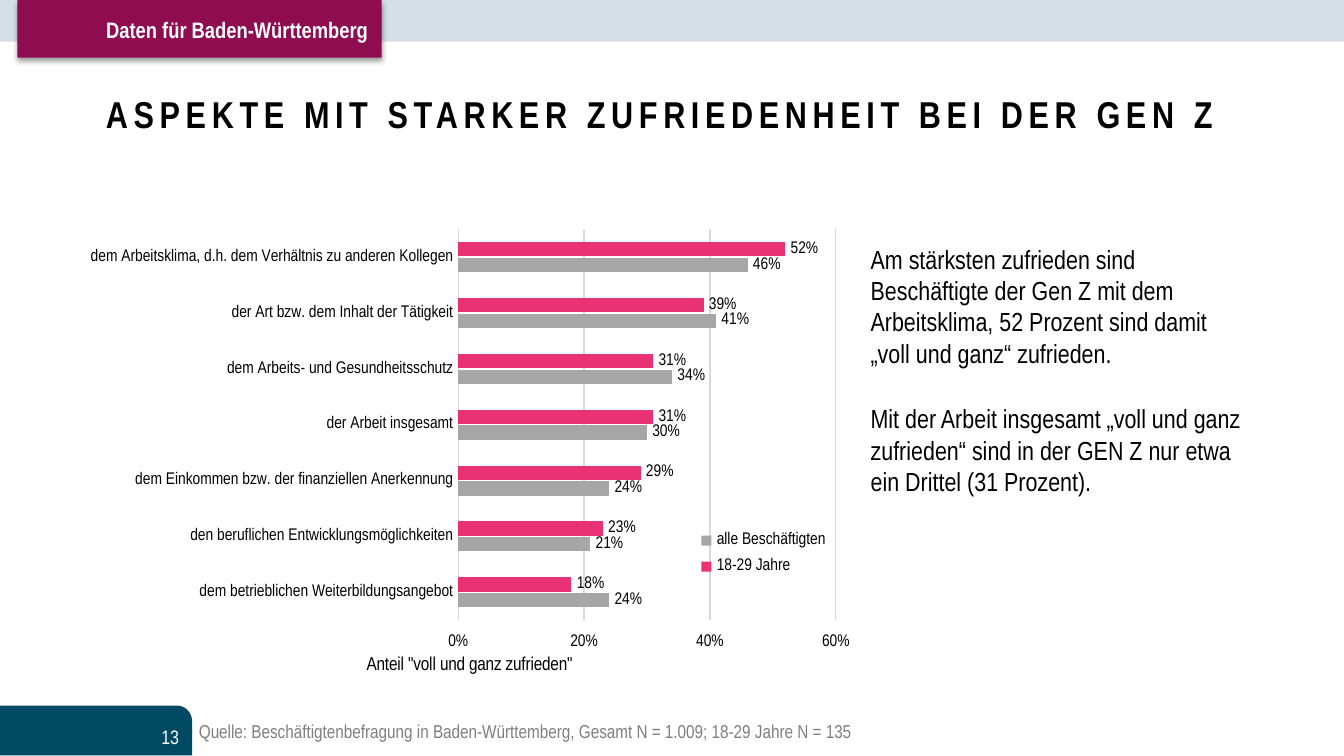
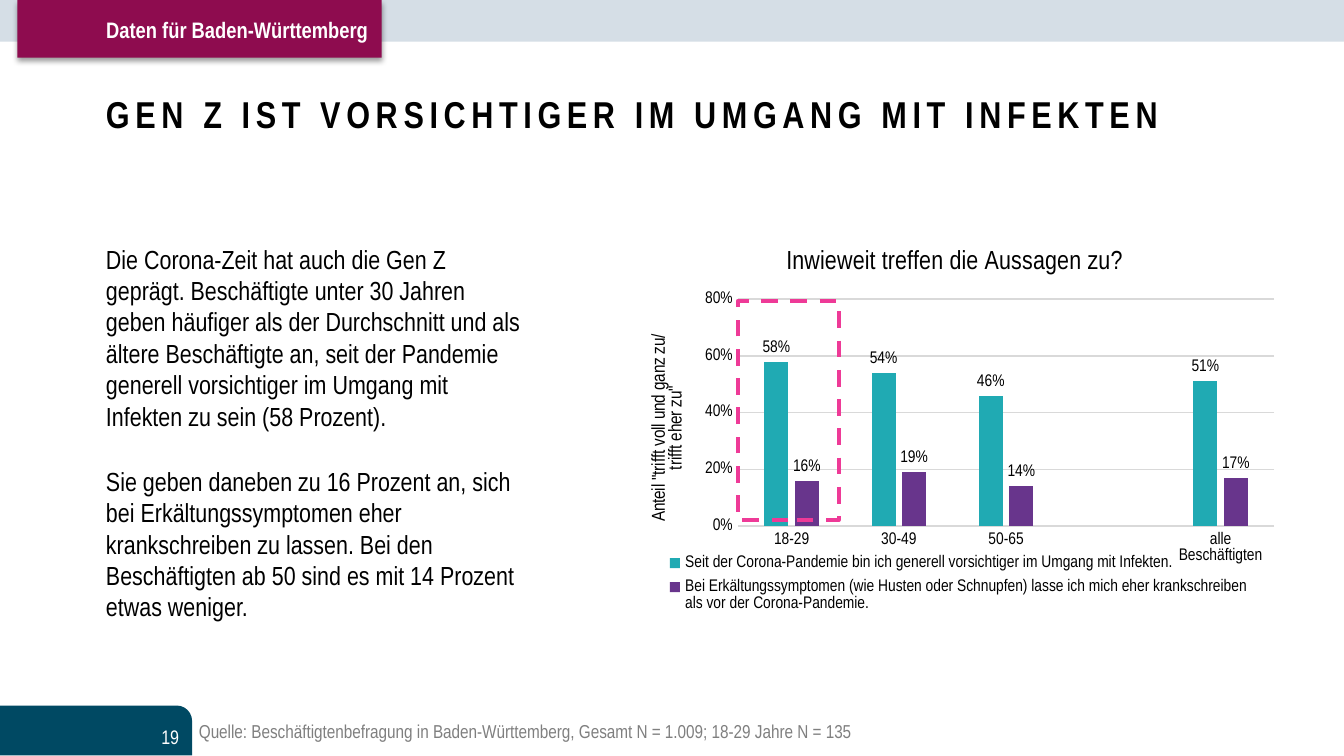
from dataclasses import dataclass
from lxml import etree
from pptx import Presentation
from pptx.chart.data import CategoryChartData
from pptx.dml.color import RGBColor as RGB
from pptx.enum.chart import (XL_CHART_TYPE as ChartType, XL_LABEL_POSITION as LabelPos,
                             XL_LEGEND_POSITION as LegendPos,
                             XL_TICK_LABEL_POSITION as TickLabelPos,
                             XL_TICK_MARK as Tick)
from pptx.enum.dml import MSO_LINE
from pptx.enum.shapes import MSO_SHAPE as Shape
from pptx.enum.text import MSO_ANCHOR as Anchor, PP_ALIGN as Align
from pptx.oxml.ns import qn
from pptx.util import Inches, Pt


@dataclass(frozen=True)
class Theme:
    font: str = "Arial Narrow"
    black: RGB = RGB(0, 0, 0)
    white: RGB = RGB(255, 255, 255)
    band: RGB = RGB.from_string("D5DEE6")
    corner: RGB = RGB.from_string("004963")
    tag: RGB = RGB.from_string("8E0C4F")
    source: RGB = RGB.from_string("7F7F7F")
    grid: RGB = RGB.from_string("D9D9D9")
    gray: RGB = RGB.from_string("A6A6A6")
    pink: RGB = RGB.from_string("E83274")
    teal: RGB = RGB.from_string("20AAB3")
    purple: RGB = RGB.from_string("68358C")
    frame: RGB = RGB.from_string("EE3A97")
    title_size: float = 20
    body_size: float = 14
    tag_size: float = 12
    number_size: float = 10.5
    small_size: float = 10
    chart_size: float = 9


theme = Theme()


def add_text(page, place, paragraphs, size, color, bold=False, align=Align.LEFT,
             anchor=Anchor.TOP, inset=0.1, gap=0, tracking=0):
    box = page.shapes.add_textbox(*map(Inches, place))
    frame = box.text_frame
    frame.word_wrap = True
    frame.vertical_anchor = anchor
    frame.margin_left = frame.margin_right = Inches(inset)
    for index, text in enumerate(paragraphs):
        para = frame.add_paragraph() if index else frame.paragraphs[0]
        para.alignment = align
        if index:
            para.space_before = Pt(gap)
        span = para.add_run()
        span.text = text
        font = span.font
        font.name, font.size, font.bold = theme.font, Pt(size), bold
        font.color.rgb = color
        if tracking:
            span._r.get_or_add_rPr().set("spc", str(tracking * 100))


def set_layout(parent, index, values, inner=False):
    """Position a chart part by fractions of the chart: x, y and optionally w, h."""
    for old in parent.findall(qn("c:layout")):
        parent.remove(old)
    layout = etree.Element(qn("c:layout"))
    manual = etree.SubElement(layout, qn("c:manualLayout"))
    settings = [("layoutTarget", "inner")] if inner else []
    settings += [("xMode", "edge"), ("yMode", "edge"), *zip("xywh", values)]
    for name, value in settings:
        etree.SubElement(manual, qn(f"c:{name}")).set("val", str(value))
    parent.insert(index, layout)


pages = [
    dict(
        number="13",
        title="ASPEKTE MIT STARKER ZUFRIEDENHEIT BEI DER GEN Z",
        title_width=9.54,
        body_place=(6.38, 1.76, 3.03, 2.84),
        body=["Am stärksten zufrieden sind Beschäftigte der Gen Z mit dem Arbeitsklima, "
              "52 Prozent sind damit „voll und ganz“ zufrieden.",
              "Mit der Arbeit insgesamt „voll und ganz zufrieden“ sind in der GEN Z "
              "nur etwa ein Drittel (31 Prozent)."],
        chart_type=ChartType.BAR_CLUSTERED,
        chart_place=(0.63, 1.59, 5.84, 3.49),
        chart_title=None,
        categories=["dem Arbeitsklima, d.h. dem Verhältnis zu anderen Kollegen",
                    "der Art bzw. dem Inhalt der Tätigkeit",
                    "dem Arbeits- und Gesundheitsschutz",
                    "der Arbeit insgesamt",
                    "dem Einkommen bzw. der finanziellen Anerkennung",
                    "den beruflichen Entwicklungsmöglichkeiten",
                    "dem betrieblichen Weiterbildungsangebot"],
        series=[("18-29 Jahre", theme.pink, (0.52, 0.39, 0.31, 0.31, 0.29, 0.23, 0.18)),
                ("alle Beschäftigten", theme.gray,
                 (0.46, 0.41, 0.34, 0.3, 0.24, 0.21, 0.24))],
        axis_title=['Anteil "voll und ganz zufrieden"'],
        maximum=0.6, gap=182, overlap=-10, legend=LegendPos.RIGHT,
        plot_layout=(0.476, 0.033, 0.481, 0.834),
        legend_layout=(0.75, 0.66, 0.23, 0.13),
        axis_title_layout=(0.355, 0.935),
        highlight=None,
    ),
    dict(
        number="19",
        title="GEN Z IST VORSICHTIGER IM UMGANG MIT INFEKTEN",
        title_width=8.62,
        body_place=(0.69, 1.76, 3.32, 2.84),
        body=["Die Corona-Zeit hat auch die Gen Z geprägt. Beschäftigte unter 30 Jahren "
              "geben häufiger als der Durchschnitt und als ältere Beschäftigte an, seit "
              "der Pandemie generell vorsichtiger im Umgang mit Infekten zu sein "
              "(58 Prozent).",
              "Sie geben daneben zu 16 Prozent an, sich bei Erkältungssymptomen eher "
              "krankschreiben zu lassen. Bei den Beschäftigten ab 50 sind es mit "
              "14 Prozent etwas weniger."],
        chart_type=ChartType.COLUMN_CLUSTERED,
        chart_place=(4.63, 1.69, 4.95, 2.98),
        chart_title="Inwieweit treffen die Aussagen zu?",
        categories=["18-29", "30-49", "50-65", "", "alle Beschäftigten"],
        series=[("Seit der Corona-Pandemie bin ich generell vorsichtiger im Umgang "
                 "mit Infekten.", theme.teal, (0.58, 0.54, 0.46, None, 0.51)),
                ("Bei Erkältungssymptomen (wie Husten oder Schnupfen) lasse ich mich "
                 "eher krankschreiben als vor der Corona-Pandemie.", theme.purple,
                 (0.16, 0.19, 0.14, None, 0.17))],
        axis_title=['Anteil "trifft voll und ganz zu/', 'trifft eher zu"'],
        maximum=0.8, gap=219, overlap=-27, legend=LegendPos.BOTTOM,
        plot_layout=(0.174, 0.18, 0.806, 0.567),
        legend_layout=(0.06, 0.8, 0.89, 0.18),
        axis_title_layout=(0.035, 0.257),
        highlight=(5.49, 2.24, 0.75, 1.63),
    ),
]

# Widescreen deck, 16:9
deck = Presentation()
deck.slide_width = Inches(10)
deck.slide_height = deck.slide_width * 9 // 16

for content in pages:
    page = deck.slides.add_slide(deck.slide_layouts[6])

    # Page corner, top band and tag
    for kind, place, color in (
            (Shape.ROUND_1_RECTANGLE, (0, 5.25, 1.43, 0.37), theme.corner),
            (Shape.RECTANGLE, (0, 0, 10, 0.31), theme.band),
            (Shape.RECTANGLE, (0.13, 0, 2.71, 0.43), theme.tag)):
        block = page.shapes.add_shape(kind, *map(Inches, place))
        block.fill.solid()
        block.fill.fore_color.rgb = color
        block.line.fill.background()
        block.shadow.inherit = False
        if kind == Shape.ROUND_1_RECTANGLE:
            block.adjustments[0] = 0.31
    # The tag, drawn last, casts a soft shadow downwards
    effects = block._element.spPr.find(qn("a:effectLst"))
    shadow = etree.SubElement(effects, qn("a:outerShdw"), blurRad=str(Pt(3.1)),
                              dist=str(Pt(1.6)), dir="5400000", rotWithShape="0")
    shade = etree.SubElement(shadow, qn("a:srgbClr"), val="000000")
    etree.SubElement(shade, qn("a:alpha"), val="38000")

    # Texts
    add_text(page, (0.69, 0.3, content["title_width"], 1.09), [content["title"]],
             theme.title_size, theme.black, bold=True, anchor=Anchor.MIDDLE, tracking=3)
    add_text(page, content["body_place"], content["body"], theme.body_size,
             theme.black, gap=18.2)
    add_text(page, (0.34, 5.33, 1.09, 0.3), [content["number"]], theme.number_size,
             theme.white, align=Align.RIGHT, anchor=Anchor.MIDDLE)
    add_text(page, (0.58, 0.07, 2.26, 0.3), ["Daten für Baden-Württemberg"],
             theme.tag_size, theme.white, bold=True, align=Align.RIGHT)
    add_text(page, (1.43, 5.31, 7.35, 0.26),
             ["Quelle: Beschäftigtenbefragung in Baden-Württemberg, "
              "Gesamt N = 1.009; 18-29 Jahre N = 135"],
             theme.small_size, theme.source, inset=0.05)

    # Chart and its series
    data = CategoryChartData(number_format="0%")
    data.categories = content["categories"]
    for name, color, values in content["series"]:
        data.add_series(name, values)
    chart = page.shapes.add_chart(content["chart_type"],
                                  *map(Inches, content["chart_place"]), data).chart
    chart.font.name, chart.font.size = theme.font, Pt(theme.small_size)
    chart.font.color.rgb = theme.black
    plot = chart.plots[0]
    plot.vary_by_categories = False
    plot.gap_width, plot.overlap = content["gap"], content["overlap"]
    for series, (name, color, values) in zip(plot.series, content["series"]):
        series.format.fill.solid()
        series.format.fill.fore_color.rgb = color
        series.invert_if_negative = False
        labels = series.data_labels
        labels.show_value = True
        labels.position = LabelPos.OUTSIDE_END
        labels.number_format, labels.number_format_is_linked = "0%", False
        labels.font.name, labels.font.size = theme.font, Pt(theme.chart_size)
        labels.font.color.rgb = theme.black

    # Axes
    groups, shares = chart.category_axis, chart.value_axis
    for axis in (groups, shares):
        axis.major_tick_mark = axis.minor_tick_mark = Tick.NONE
        font = axis.tick_labels.font
        font.name, font.size = theme.font, Pt(theme.chart_size)
        font.color.rgb = theme.black
    shares.minimum_scale, shares.maximum_scale = 0, content["maximum"]
    shares.major_unit = 0.2
    shares.tick_labels.number_format = "0%"
    shares.tick_labels.number_format_is_linked = False
    shares.format.line.fill.background()
    for line in (groups.format.line, shares.major_gridlines.format.line):
        line.color.rgb, line.width = theme.grid, Pt(0.75)
    if content["chart_type"] == ChartType.BAR_CLUSTERED:
        groups.reverse_order = True
        shares.tick_label_position = TickLabelPos.HIGH

    # Chart title and axis title
    titles = [(shares.axis_title, content["axis_title"], theme.small_size)]
    chart.has_title = bool(content["chart_title"])
    if content["chart_title"]:
        titles.append((chart.chart_title, [content["chart_title"]], theme.body_size))
    for heading, lines, size in titles:
        frame = heading.text_frame
        for index, text in enumerate(lines):
            para = frame.add_paragraph() if index else frame.paragraphs[0]
            para.font.bold = False
            span = para.add_run()
            span.text = text
            span.font.name, span.font.size, span.font.bold = theme.font, Pt(size), False
            span.font.color.rgb = theme.black

    # Legend and positions inside the chart
    chart.has_legend = True
    legend = chart.legend
    legend.position, legend.include_in_layout = content["legend"], False
    legend.font.name, legend.font.size = theme.font, Pt(theme.chart_size)
    legend.font.color.rgb = theme.black
    set_layout(chart._chartSpace.chart.plotArea, 0, content["plot_layout"], inner=True)
    set_layout(legend._element, 1, content["legend_layout"])
    set_layout(shares.axis_title._element, 1, content["axis_title_layout"])

    # Dashed frame around the youngest group
    if content["highlight"]:
        marker = page.shapes.add_shape(Shape.RECTANGLE,
                                       *map(Inches, content["highlight"]))
        marker.fill.background()
        marker.line.color.rgb, marker.line.width = theme.frame, Pt(2.25)
        marker.line.dash_style = MSO_LINE.DASH
        marker.shadow.inherit = False

deck.save("out.pptx")
